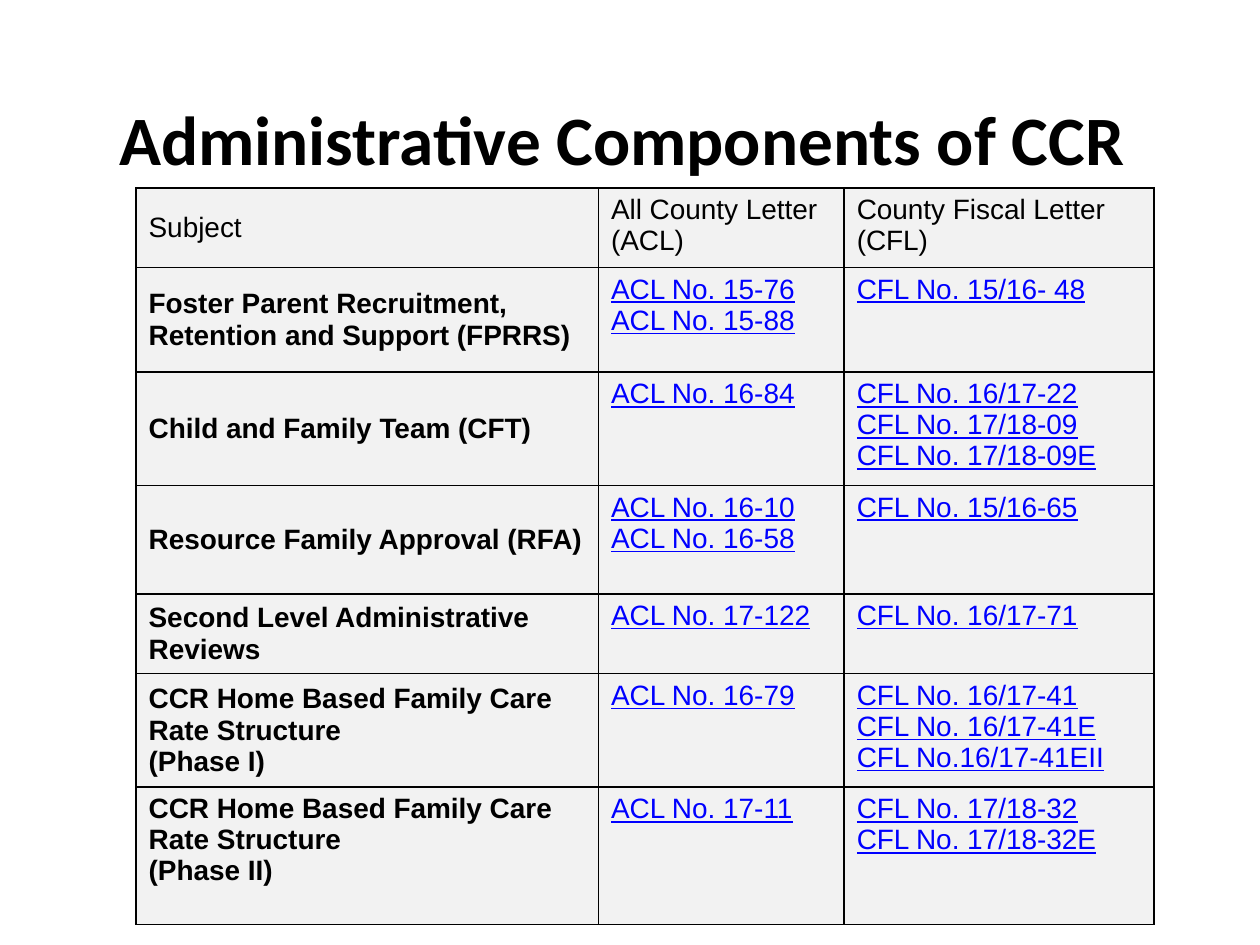
from lxml import etree
from pptx import Presentation
from pptx.dml.color import RGBColor
from pptx.enum.text import MSO_ANCHOR, PP_ALIGN
from pptx.oxml.ns import qn
from pptx.util import Inches, Pt

MIDDLE, TOP = MSO_ANCHOR.MIDDLE, MSO_ANCHOR.TOP
CENTER = PP_ALIGN.CENTER
BLACK, LINK_BLUE, CELL_GRAY = "000000", "0000FF", "F2F2F2"

COLUMN_WIDTHS = [3.67, 1.95, 2.46]
ROW_HEIGHTS = [0.6, 0.83, 0.86, 0.86, 0.6, 0.86, 1.09]
# Each cell is a list of paragraphs; \v is a line break.
ROWS = [
    (["Subject"], ["All County Letter (ACL)"], ["County Fiscal Letter (CFL)"]),
    (["Foster Parent Recruitment, Retention and Support (FPRRS)"],
     ["ACL No. 15-76", "ACL No. 15-88"],
     ["CFL No. 15/16- 48"]),
    (["Child and Family Team (CFT)"],
     ["ACL No. 16-84"],
     ["CFL No. 16/17-22", "CFL No. 17/18-09", "CFL No. 17/18-09E"]),
    (["Resource Family Approval (RFA)"],
     ["ACL No. 16-10", "ACL No. 16-58"],
     ["CFL No. 15/16-65"]),
    (["Second Level Administrative Reviews"],
     ["ACL No. 17-122"],
     ["CFL No. 16/17-71"]),
    (["CCR Home Based Family Care Rate Structure \v(Phase I)"],
     ["ACL No. 16-79"],
     ["CFL No. 16/17-41", "CFL No. 16/17-41E", "CFL No.16/17-41EII"]),
    (["CCR Home Based Family Care Rate Structure \v(Phase II)"],
     ["ACL No. 17-11"],
     ["CFL No. 17/18-32", "CFL No. 17/18-32E"]),
]


def color(hex_string):
    return RGBColor.from_string(hex_string)


def add_borders(cell):
    """Draw a 1 pt black line on all four sides; call before the cell is filled."""
    properties = cell._tc.get_or_add_tcPr()
    for side in ("a:lnL", "a:lnR", "a:lnT", "a:lnB"):
        line = etree.SubElement(properties, qn(side), w=str(Pt(1)))
        fill = etree.SubElement(line, qn("a:solidFill"))
        etree.SubElement(fill, qn("a:srgbClr"), val=BLACK)


prs = Presentation()
prs.slide_width, prs.slide_height = Inches(10), Inches(7.5)
slide = prs.slides.add_slide(prs.slide_layouts[6])

title = slide.shapes.add_textbox(Inches(0.5), Inches(0.67), Inches(9), Inches(0.85))
title_frame = title.text_frame
title_frame.word_wrap = True
title_frame.vertical_anchor = MIDDLE
heading = title_frame.paragraphs[0]
heading.text = "Administrative Components of CCR "
heading.alignment = CENTER
heading.font.name, heading.font.size, heading.font.bold = "Calibri", Pt(39.6), True
heading.font.color.rgb = color(BLACK)

letters = slide.shapes.add_table(
    len(ROWS), len(COLUMN_WIDTHS), Inches(1.08), Inches(1.49),
    Inches(sum(COLUMN_WIDTHS)), Inches(sum(ROW_HEIGHTS))).table
letters.first_row = letters.horz_banding = False
for column, width in zip(letters.columns, COLUMN_WIDTHS):
    column.width = Inches(width)
for row, height in zip(letters.rows, ROW_HEIGHTS):
    row.height = Inches(height)

last_row = len(ROWS) - 1
for r, row in enumerate(ROWS):
    for c, lines in enumerate(row):
        is_subject = r > 0 and c == 0
        is_link = r > 0 and c > 0
        cell = letters.cell(r, c)
        add_borders(cell)
        cell.fill.solid()
        cell.fill.fore_color.rgb = color(CELL_GRAY)
        cell.vertical_anchor = MIDDLE if c == 0 and r < last_row else TOP
        cell.text = "\n".join(lines)
        for paragraph in cell.text_frame.paragraphs:
            font = paragraph.font
            font.name, font.size = "Arial", Pt(16)
            font.bold, font.underline = is_subject, is_link
            font.color.rgb = color(LINK_BLUE if is_link else BLACK)
            # The paragraph end would otherwise be 18 pt and stretch the row.
            etree.SubElement(paragraph._p, qn("a:endParaRPr"), sz="1600")

prs.save("out.pptx")
